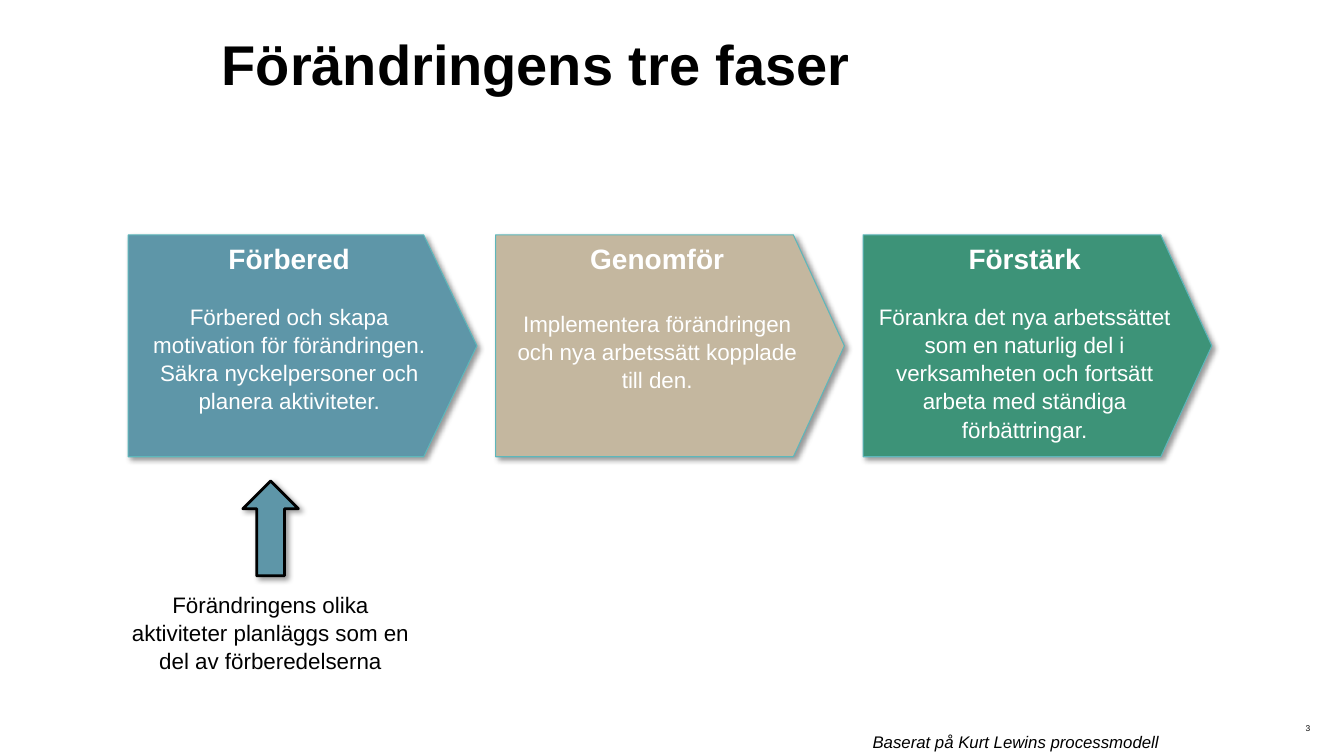
import dataclasses

import lxml.etree
import pptx
import pptx.dml.color
import pptx.enum.shapes
import pptx.enum.text
import pptx.oxml.ns
import pptx.util

Cm = pptx.util.Cm
Pt = pptx.util.Pt
Align = pptx.enum.text.PP_ALIGN
Shape = pptx.enum.shapes.MSO_SHAPE


@dataclasses.dataclass(frozen=True)
class Theme:
    font: str = "Arial"
    black: str = "000000"
    white: str = "FFFFFF"
    blue: str = "5E96A8"
    sand: str = "C4B79F"
    green: str = "3D9378"
    outline: str = "5DB7BB"
    title_size: int = 40
    heading_size: int = 20
    body_size: int = 16
    source_size: int = 12
    number_size: int = 6
    line_spacing: float = 1.05


class SlideBuilder:
    def __init__(self, slide, theme):
        self.slide = slide
        self.theme = theme

    def color(self, value):
        return pptx.dml.color.RGBColor.from_string(value)

    def add_text(self, paragraph, text, size, color, align, bold=False, italic=False):
        paragraph.alignment = align
        paragraph.line_spacing = self.theme.line_spacing
        run = paragraph.add_run()
        run.text = text
        run.font.name = self.theme.font
        run.font.size = Pt(size)
        run.font.bold = bold
        run.font.italic = italic
        run.font.color.rgb = self.color(color)

    def title(self, text, left, top, width, height):
        shape = self.slide.shapes.title
        shape.left, shape.top, shape.width, shape.height = left, top, width, height
        frame = shape.text_frame
        frame.margin_left = frame.margin_right = Cm(0.18)
        frame.margin_top = frame.margin_bottom = Cm(0.1)
        frame.vertical_anchor = pptx.enum.text.MSO_ANCHOR.TOP
        self.add_text(frame.paragraphs[0], text, self.theme.title_size,
                      self.theme.black, Align.LEFT, bold=True)

    def label(self, text, left, top, width, height, size, align,
              italic=False, wrap=True, margin=None):
        frame = self.slide.shapes.add_textbox(left, top, width, height).text_frame
        frame.word_wrap = wrap
        frame.auto_size = pptx.enum.text.MSO_AUTO_SIZE.SHAPE_TO_FIT_TEXT
        if margin is not None:
            frame.margin_left = frame.margin_right = margin
            frame.margin_top = frame.margin_bottom = margin
        self.add_text(frame.paragraphs[0], text, size, self.theme.black, align, italic=italic)

    def block(self, kind, left, top, width, height, fill, line, line_width):
        shape = self.slide.shapes.add_shape(kind, left, top, width, height)
        shape.fill.solid()
        shape.fill.fore_color.rgb = self.color(fill)
        shape.line.color.rgb = self.color(line)
        shape.line.width = Pt(line_width)
        self.shadow(shape)
        return shape

    def shadow(self, shape):
        shape.shadow.inherit = False
        qn = pptx.oxml.ns.qn
        effects = shape.element.spPr.find(qn("a:effectLst"))
        outer = lxml.etree.SubElement(
            effects, qn("a:outerShdw"), blurRad=str(Pt(4)), dist=str(Pt(3)),
            dir="2700000", algn="tl", rotWithShape="0")
        color = lxml.etree.SubElement(outer, qn("a:srgbClr"), val=self.theme.black)
        lxml.etree.SubElement(color, qn("a:alpha"), val="40000")

    def phase(self, heading, body, left, fill, point, gap):
        shape = self.block(Shape.PENTAGON, left, Cm(5.92), Cm(8.79), Cm(5.59),
                           fill, self.theme.outline, 0.75)
        shape.adjustments[0] = point
        frame = shape.text_frame
        frame.word_wrap = True
        frame.vertical_anchor = pptx.enum.text.MSO_ANCHOR.TOP
        self.add_text(frame.paragraphs[0], heading, self.theme.heading_size,
                      self.theme.white, Align.CENTER, bold=True)
        paragraph = frame.add_paragraph()
        paragraph.space_before = Pt(gap)
        self.add_text(paragraph, body, self.theme.body_size, self.theme.white, Align.CENTER)


def main():
    presentation = pptx.Presentation()
    presentation.slide_width = Cm(33.87)
    presentation.slide_height = Cm(19.05)
    theme = Theme()
    slide = presentation.slides.add_slide(presentation.slide_layouts[5])
    builder = SlideBuilder(slide, theme)

    builder.title("Förändringens tre faser", Cm(5.41), Cm(0.56), Cm(22.86), Cm(2.39))

    phases = [
        ("Förbered",
         "Förbered och skapa motivation för förändringen. "
         "Säkra nyckelpersoner och planera aktiviteter.",
         theme.blue, 0.24, 19),
        ("Genomför",
         "Implementera förändringen och nya arbetssätt kopplade till den.",
         theme.sand, 0.23, 24),
        ("Förstärk",
         "Förankra det nya arbetssättet som en naturlig del i verksamheten "
         "och fortsätt arbeta med ständiga förbättringar.",
         theme.green, 0.23, 19),
    ]
    for index, (heading, body, fill, point, gap) in enumerate(phases):
        builder.phase(heading, body, Cm(3.23 + index * 9.26), fill, point, gap)

    builder.block(Shape.UP_ARROW, Cm(6.12), Cm(12.12), Cm(1.4), Cm(2.39),
                  theme.blue, theme.black, 2)
    builder.label("Förändringens olika aktiviteter planläggs som en del av förberedelserna",
                  Cm(3.02), Cm(14.73), Cm(7.59), Cm(2.31), theme.body_size, Align.CENTER)
    builder.label("Baserat på Kurt Lewins processmodell", Cm(21.74), Cm(18.29),
                  Cm(8.08), Cm(0.76), theme.source_size, Align.LEFT, italic=True, wrap=False)
    builder.label("3", Cm(31.32), Cm(18.21), Cm(1.7), Cm(0.25), theme.number_size,
                  Align.RIGHT, margin=Cm(0))
    presentation.save("out.pptx")


if __name__ == "__main__":
    main()
